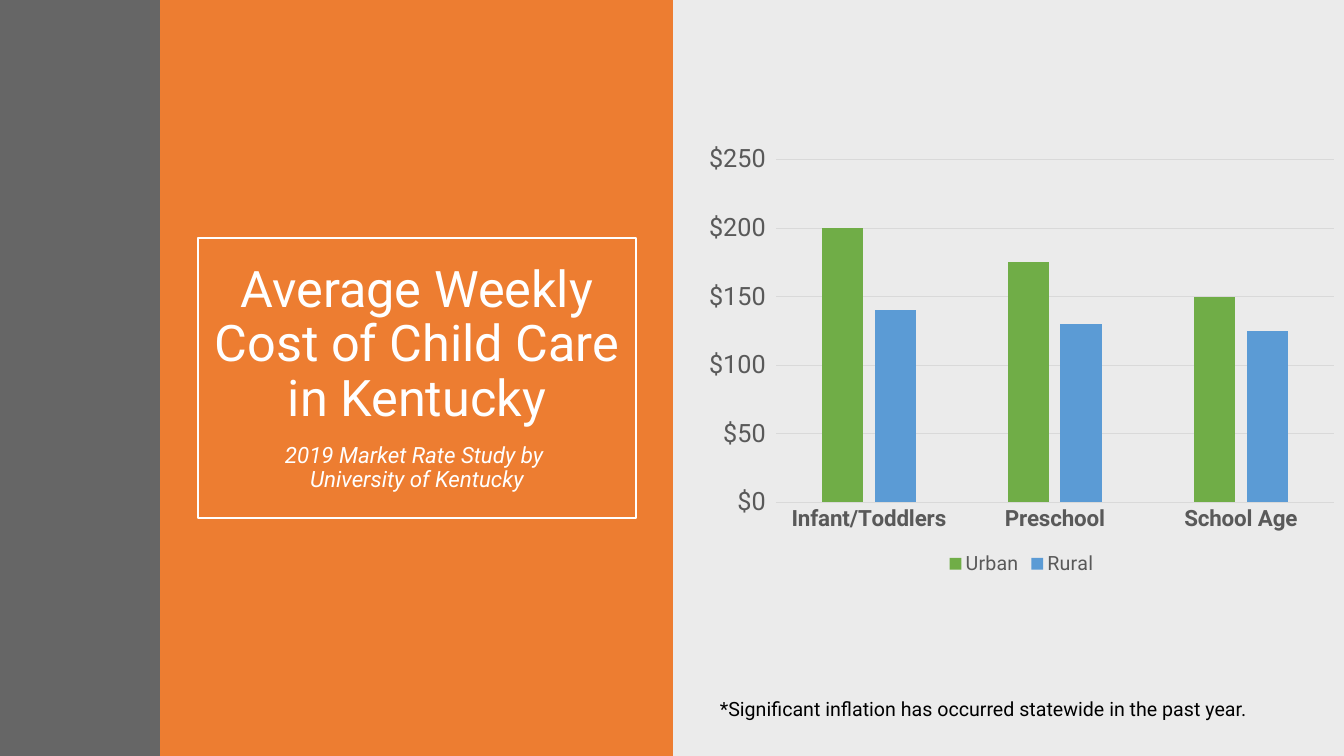
from lxml.etree import SubElement
from pptx import Presentation
from pptx.chart.data import CategoryChartData
from pptx.dml.color import RGBColor
from pptx.enum.chart import XL_CHART_TYPE, XL_LEGEND_POSITION, XL_TICK_MARK
from pptx.enum.shapes import MSO_SHAPE
from pptx.enum.text import MSO_ANCHOR, MSO_AUTO_SIZE, PP_ALIGN
from pptx.oxml.ns import qn
from pptx.util import Pt

SCALE = 914400 / 100.8
FONT = "Roboto"
GRAY = "595959"
RULE = "D9D9D9"
CURRENCY = '"$"#,##0_);[Red]\\("$"#,##0\\)'
CATEGORIES = ["Infant/Toddlers", "Preschool", "School Age"]
WEEKLY_COSTS = [
    ("Urban", (200, 175, 150), "70AD47"),
    ("Rural", (140, 130, 125), "5B9BD5"),
]


def px(*lengths):
    """Turn whole pixels into a list of EMU lengths."""
    return [round(length * SCALE) for length in lengths]


def color(value):
    """Make a colour from a hex string."""
    return RGBColor.from_string(value)


def format_font(font, size, shade, bold=False, italic=False):
    """Set the typeface, size, colour and style of a font."""
    font.name = FONT
    font.size = Pt(size)
    font.color.rgb = color(shade)
    font.bold = bold
    font.italic = italic


def write(para, text, size=14, shade="000000", italic=False, align=None, spacing=None, before=None):
    """Write text into a paragraph and format it."""
    para.text = text
    para.alignment = align
    para.line_spacing = spacing
    para.space_before = before
    for span in para.runs:
        format_font(span.font, size, shade, italic=italic)


def add_panel(page, left, width, shade, opacity=100):
    """Add a full-height panel without an outline."""
    panel = page.shapes.add_shape(MSO_SHAPE.RECTANGLE, *px(left, 0, width, 756))
    panel.shadow.inherit = False
    panel.fill.solid()
    panel.fill.fore_color.rgb = color(shade)
    panel.line.fill.background()
    if opacity < 100:
        tint = panel.fill._xPr.find(qn("a:solidFill"))[0]
        SubElement(tint, qn("a:alpha"), val=str(opacity * 1000))
    return panel


def place_title(page, panel):
    """Put the framed title in front of its panel."""
    title = page.shapes.title
    panel.element.addnext(title.element)
    title.left, title.top, title.width, title.height = px(198, 238, 438, 280)
    title.line.color.rgb = color("FFFFFF")
    title.line.width = Pt(2)
    frame = title.text_frame
    frame.word_wrap = True
    frame.auto_size = MSO_AUTO_SIZE.NONE
    frame.vertical_anchor = MSO_ANCHOR.MIDDLE
    shared = {"shade": "FFFFFF", "align": PP_ALIGN.CENTER, "spacing": 0.9}
    write(frame.paragraphs[0], "Average Weekly Cost of Child Care in Kentucky", size=36, **shared)
    write(frame.add_paragraph(), "2019 Market Rate Study by \vUniversity of Kentucky",
          size=16, italic=True, before=Pt(12), **shared)


def add_footnote(page, text):
    """Add a single-line note that grows with its text."""
    box = page.shapes.add_textbox(*px(710, 692, 561, 34))
    box.text_frame.word_wrap = False
    box.text_frame.auto_size = MSO_AUTO_SIZE.SHAPE_TO_FIT_TEXT
    write(box.text_frame.paragraphs[0], text)


def format_axis(axis, size, bold=False):
    """Set the labels of an axis and remove its tick marks."""
    axis.major_tick_mark = axis.minor_tick_mark = XL_TICK_MARK.NONE
    format_font(axis.tick_labels.font, size, GRAY, bold=bold)


def format_rule(line):
    """Make a thin light line."""
    line.color.rgb = color(RULE)
    line.width = Pt(0.75)


def add_cost_chart(page):
    """Add the column chart of weekly costs."""
    data = CategoryChartData(number_format=CURRENCY)
    data.categories = CATEGORIES
    for name, values, _ in WEEKLY_COSTS:
        data.add_series(name, values)
    chart = page.shapes.add_chart(
        XL_CHART_TYPE.COLUMN_CLUSTERED, *px(696, 136, 651, 444), data).chart
    chart.has_title = False
    chart.has_legend = True
    chart.legend.position = XL_LEGEND_POSITION.BOTTOM
    chart.legend.include_in_layout = False
    format_font(chart.legend.font, 14, GRAY)

    plot = chart.plots[0]
    plot.gap_width = 219
    plot.overlap = -27
    plot.vary_by_categories = False
    for series, (_, _, shade) in zip(plot.series, WEEKLY_COSTS):
        series.format.fill.solid()
        series.format.fill.fore_color.rgb = color(shade)

    format_axis(chart.category_axis, 16, bold=True)
    format_rule(chart.category_axis.format.line)
    costs = chart.value_axis
    format_axis(costs, 18)
    costs.minimum_scale, costs.maximum_scale, costs.major_unit = 0, 250, 50
    costs.tick_labels.number_format = CURRENCY
    costs.tick_labels.number_format_is_linked = False
    costs.format.line.fill.background()
    format_rule(costs.major_gridlines.format.line)


def main():
    """Build the slide and save the deck."""
    deck = Presentation()
    deck.slide_width, deck.slide_height = px(1344, 756)
    page = deck.slides.add_slide(deck.slide_layouts[5])
    add_panel(page, 672, 672, "000000", opacity=8)
    title_panel = add_panel(page, 160, 513, "ED7D31")
    place_title(page, title_panel)
    add_panel(page, 0, 160, "404040", opacity=80)
    add_footnote(page, "*Significant inflation has occurred statewide in the past year.")
    add_cost_chart(page)
    deck.save("out.pptx")


if __name__ == "__main__":
    main()
